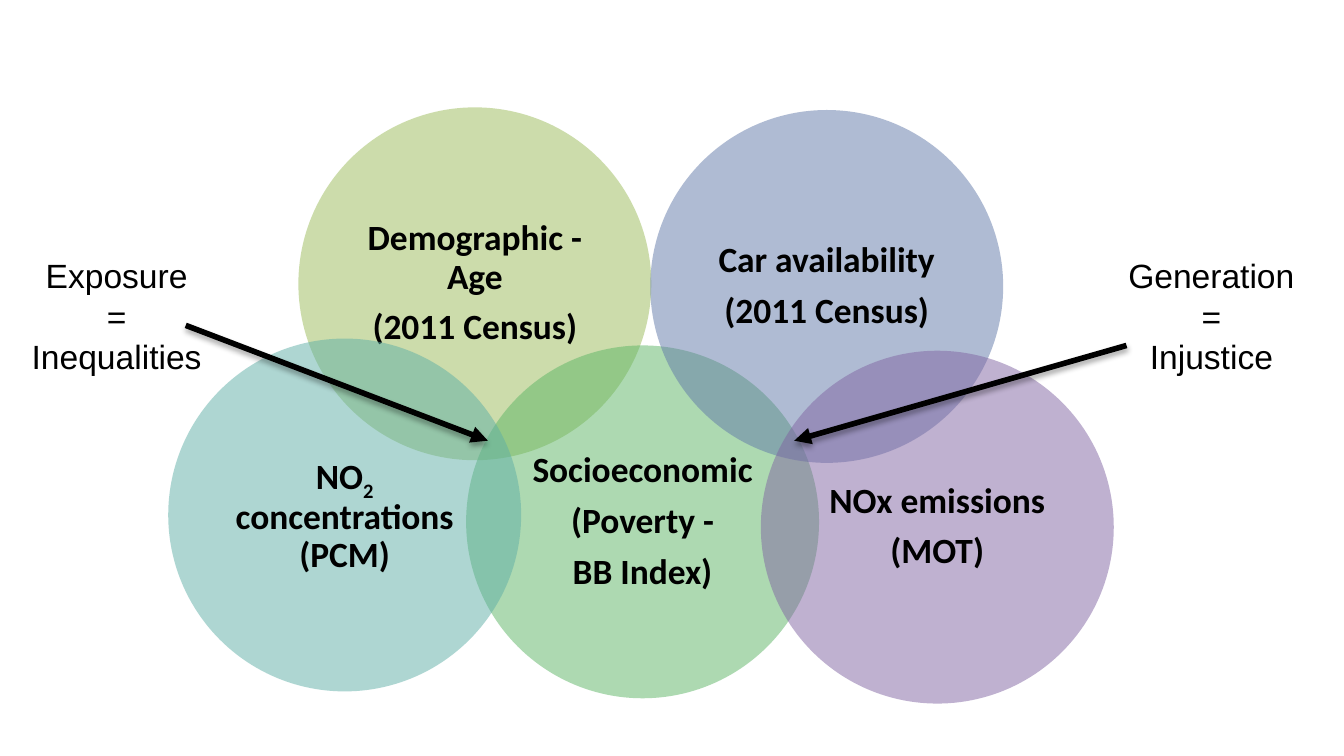
from lxml import etree
from pptx import Presentation
from pptx.dml.color import RGBColor
from pptx.enum.shapes import MSO_CONNECTOR, MSO_SHAPE
from pptx.enum.text import MSO_ANCHOR, PP_ALIGN
from pptx.oxml.ns import qn
from pptx.util import Cm, Pt

OVAL = MSO_SHAPE.OVAL
LINE = MSO_CONNECTOR.STRAIGHT
MID = MSO_ANCHOR.MIDDLE
MID_TEXT = PP_ALIGN.CENTER

BLACK = "000000"
SIZE = 6.67
INSET = Cm(0.21)
BODY = {"name": "Calibri", "size": Pt(19), "bold": True}
NOTE = {"name": "Arial", "size": Pt(18)}
GAPS = {"line_spacing": 0.9, "space_after": Pt(6.65)}
FRAME = {"margin_left": INSET, "margin_right": INSET, "margin_top": INSET,
         "margin_bottom": INSET, "vertical_anchor": MID}
SHADE = {"blurRad": Pt(3.1), "dist": Pt(1.8), "dir": 90 * 60000, "rotWithShape": 0}

CIRCLES = [
    (5.64, 2.03, "9BBB59", ["Demographic - Age", "(2011 Census)"]),
    (8.81, 6.53, "5CB565", ["Socioeconomic", "(Poverty -", "BB Index)"]),
    (3.18, 6.4, "5EAFA6", [("NO", "2", " concentrations (PCM)")]),
    (12.29, 2.08, "6179A8", ["Car availability", "(2011 Census)"]),
    (14.38, 6.63, "8064A2", ["NOx emissions", "(MOT)"]),
]
NOTES = [
    (0.3, 3.81, ["Exposure", "=", "Inequalities"], (3.51, 6.15, 9.22, 8.33)),
    (20.7, 4.39, ["Generation", "=", "Injustice"], (21.29, 6.53, 15.01, 8.33)),
]


def color(code):
    """Turn a hex string into a colour."""
    return RGBColor.from_string(code)


def apply(item, style):
    """Set each format value on the item."""
    for name, value in style.items():
        setattr(item, name, value)


def add(parent, tag, **attrs):
    """Append an XML child with the given attributes."""
    child = etree.SubElement(parent, qn(tag))
    for name, value in attrs.items():
        child.set(name, str(value))
    return child


class Board:
    """Hold the style and the current slide."""

    def __init__(self, deck):
        """Start a blank slide."""
        self.slide = deck.slides.add_slide(deck.slide_layouts[6])
        self.shapes = self.slide.shapes

    def label(self, frame, lines, font, gaps):
        """Fill a frame with centred lines; tuples hold a subscript."""
        frame.word_wrap = True
        for i, line in enumerate(lines):
            para = frame.paragraphs[0] if i == 0 else frame.add_paragraph()
            para.alignment = MID_TEXT
            apply(para, gaps)
            parts = (line,) if isinstance(line, str) else line
            for j, part in enumerate(parts):
                run = para.add_run()
                run.text = part
                apply(run.font, font)
                run.font.color.rgb = color(BLACK)
                if j == 1:
                    run.font._element.set("baseline", "-25000")

    def circle(self, left, top, fill, lines):
        """Draw a half-clear circle with its label."""
        oval = self.shapes.add_shape(OVAL, Cm(left), Cm(top), Cm(SIZE), Cm(SIZE))
        oval.shadow.inherit = False
        oval.line.fill.background()
        oval.fill.solid()
        oval.fill.fore_color.rgb = color(fill)
        tint = oval._element.spPr.find(qn("a:solidFill"))[0]
        add(tint, "a:alpha", val=50000)
        apply(oval.text_frame, FRAME)
        self.label(oval.text_frame, lines, BODY, GAPS)

    def note(self, left, width, lines):
        """Place a side note."""
        box = self.shapes.add_textbox(Cm(left), Cm(4.7), Cm(width), Cm(2.57))
        self.label(box.text_frame, lines, NOTE, {})

    def arrow(self, *ends):
        """Draw a shaded arrow between two points."""
        link = self.shapes.add_connector(LINE, *map(Cm, ends))
        link.line.width = Pt(3)
        link.line.color.rgb = color(BLACK)
        props = link._element.spPr
        add(props.find(qn("a:ln")), "a:tailEnd", type="triangle")
        glow = add(props, "a:effectLst")
        shade = add(glow, "a:outerShdw", **SHADE)
        tint = add(shade, "a:srgbClr", val=BLACK)
        add(tint, "a:alpha", val=35000)


def main():
    """Build and save the slide."""
    deck = Presentation()
    deck.slide_width, deck.slide_height = Cm(25.4), Cm(14.29)
    board = Board(deck)
    for item in CIRCLES:
        board.circle(*item)
    for left, width, lines, ends in NOTES:
        board.note(left, width, lines)
        board.arrow(*ends)
    deck.save("out.pptx")


if __name__ == "__main__":
    main()
